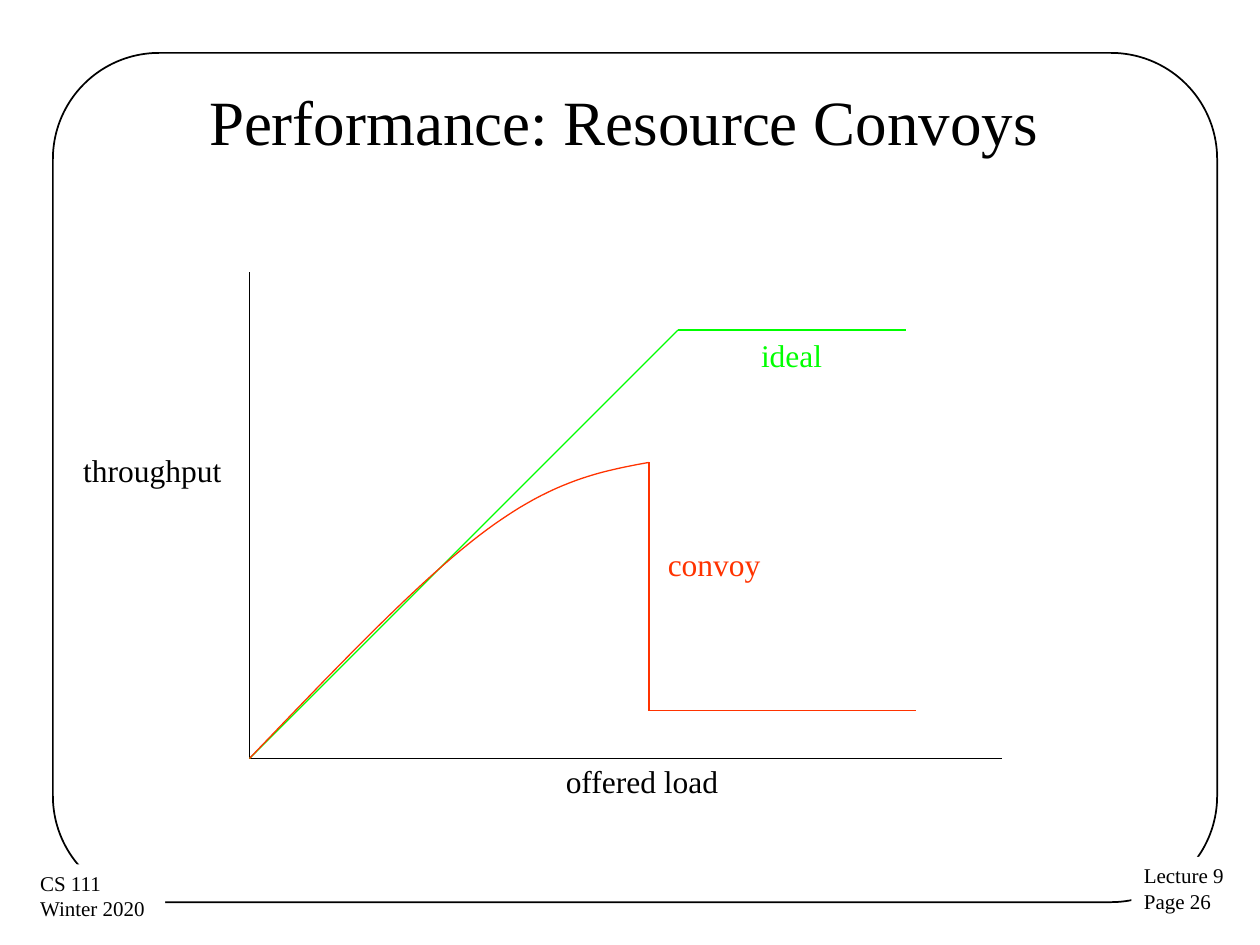
from dataclasses import dataclass
from lxml.etree import SubElement
from pptx import Presentation
from pptx.dml.color import RGBColor
from pptx.enum.shapes import MSO_CONNECTOR, MSO_SHAPE
from pptx.enum.text import MSO_ANCHOR, PP_ALIGN
from pptx.oxml.ns import qn
from pptx.util import Inches, Pt

HUES = {"ink": "000000", "paper": "FFFFFF", "ideal": "00FF00", "convoy": "FF3300"}
Point = tuple[float, float]


@dataclass
class Label:
    text: str
    left: float
    top: float
    width: float
    height: float = 0.39
    size: int = 18
    hue: str = "ink"
    fill: str = ""
    inset: float = 0.09
    align: PP_ALIGN = PP_ALIGN.LEFT
    anchor: MSO_ANCHOR = MSO_ANCHOR.TOP
    wrap: bool = False


@dataclass
class Trace:
    points: list[Point]
    hue: str


ZERO = (1.98, 6.02)
KNEE = (5.38, 2.62)
PEAK = (5.15, 3.67)
DROP = (5.15, 5.64)
BENDS = [
    [ZERO, (2.66, 5.31), (3.34, 4.59), (3.87, 4.2)],
    [(3.87, 4.2), (4.4, 3.81), (4.77, 3.74), PEAK],
]
TRACES = [
    Trace([(1.98, 2.16), ZERO, (7.95, 6.02)], "ink"),
    Trace([ZERO, KNEE, (7.19, 2.62)], "ideal"),
    Trace([PEAK, DROP, (7.27, 5.64)], "convoy"),
]
CORNERS = [
    Label("Lecture 9\nPage 26", 8.98, 6.8, 0.85, 0.51, 12, fill="paper", inset=0.1),
    Label("CS 111\nWinter 2020", 0.22, 6.86, 1.09, 0.51, 12, fill="paper", inset=0.1),
]
LABELS = [
    Label("Performance: Resource Convoys", 0.68, 0.33, 8.54, 1.25, 36,
          align=PP_ALIGN.CENTER, anchor=MSO_ANCHOR.MIDDLE, wrap=True),
    Label("throughput", 0.57, 3.53, 1.35),
    Label("offered load", 4.4, 6, 1.41),
    Label("ideal", 5.95, 2.62, 0.67, hue="ideal"),
    Label("convoy", 5.21, 4.28, 0.93, hue="convoy"),
]


def tint(name: str) -> RGBColor:
    return RGBColor.from_string(HUES[name])


def style(line, hue: str, width: float) -> None:
    line.color.rgb = tint(hue)
    line.width = Pt(width)


def frame(shapes) -> None:
    box = shapes.add_shape(MSO_SHAPE.ROUNDED_RECTANGLE, Inches(0.42), Inches(0.42),
                           Inches(9.24), Inches(6.74))
    box.adjustments[0] = 0.125
    box.shadow.inherit = False
    box.fill.background()
    style(box.line, "ink", 1)


def write(shapes, label: Label) -> None:
    box = shapes.add_textbox(Inches(label.left), Inches(label.top),
                             Inches(label.width), Inches(label.height))
    if label.fill:
        box.fill.solid()
        box.fill.fore_color.rgb = tint(label.fill)
    body = box.text_frame
    body.text = label.text
    side, edge = Inches(label.inset), Inches(0.05)
    form = {"word_wrap": label.wrap, "vertical_anchor": label.anchor,
            "margin_left": side, "margin_right": side,
            "margin_top": edge, "margin_bottom": edge}
    for key, value in form.items():
        setattr(body, key, value)
    for para in body.paragraphs:
        para.alignment = label.align
        for run in para.runs:
            for key, value in {"name": "Times New Roman", "size": Pt(label.size)}.items():
                setattr(run.font, key, value)
            run.font.color.rgb = tint(label.hue)


def draw(shapes, trace: Trace) -> None:
    for start, end in zip(trace.points, trace.points[1:]):
        ends = [Inches(value) for value in start + end]
        line = shapes.add_connector(MSO_CONNECTOR.STRAIGHT, *ends)
        style(line.line, trace.hue, 0.75)
        SubElement(line._element.spPr, qn("a:effectLst"))


def blend(bend: list[Point], part: float) -> Point:
    rest = 1 - part
    mix = (rest**3, 3 * rest**2 * part, 3 * rest * part**2, part**3)
    x, y = (sum(m * v for m, v in zip(mix, axis)) for axis in zip(*bend))
    return x, y


def curve(shapes, bends: list[list[Point]], hue: str, steps: int = 24) -> None:
    points = [blend(bend, step / steps) for bend in bends for step in range(1, steps + 1)]
    x, y = bends[0][0]
    pen = shapes.build_freeform(Inches(x), Inches(y))
    pen.add_line_segments([(Inches(x), Inches(y)) for x, y in points], close=False)
    shape = pen.convert_to_shape()
    shape.shadow.inherit = False
    shape.fill.background()
    style(shape.line, hue, 0.75)


def main() -> None:
    deck = Presentation()
    deck.slide_width, deck.slide_height = Inches(10), Inches(7.5)
    shapes = deck.slides.add_slide(deck.slide_layouts[6]).shapes
    frame(shapes)
    for label in CORNERS + LABELS:
        write(shapes, label)
    for trace in TRACES:
        draw(shapes, trace)
    curve(shapes, BENDS, "convoy")
    deck.save("out.pptx")


if __name__ == "__main__":
    main()
